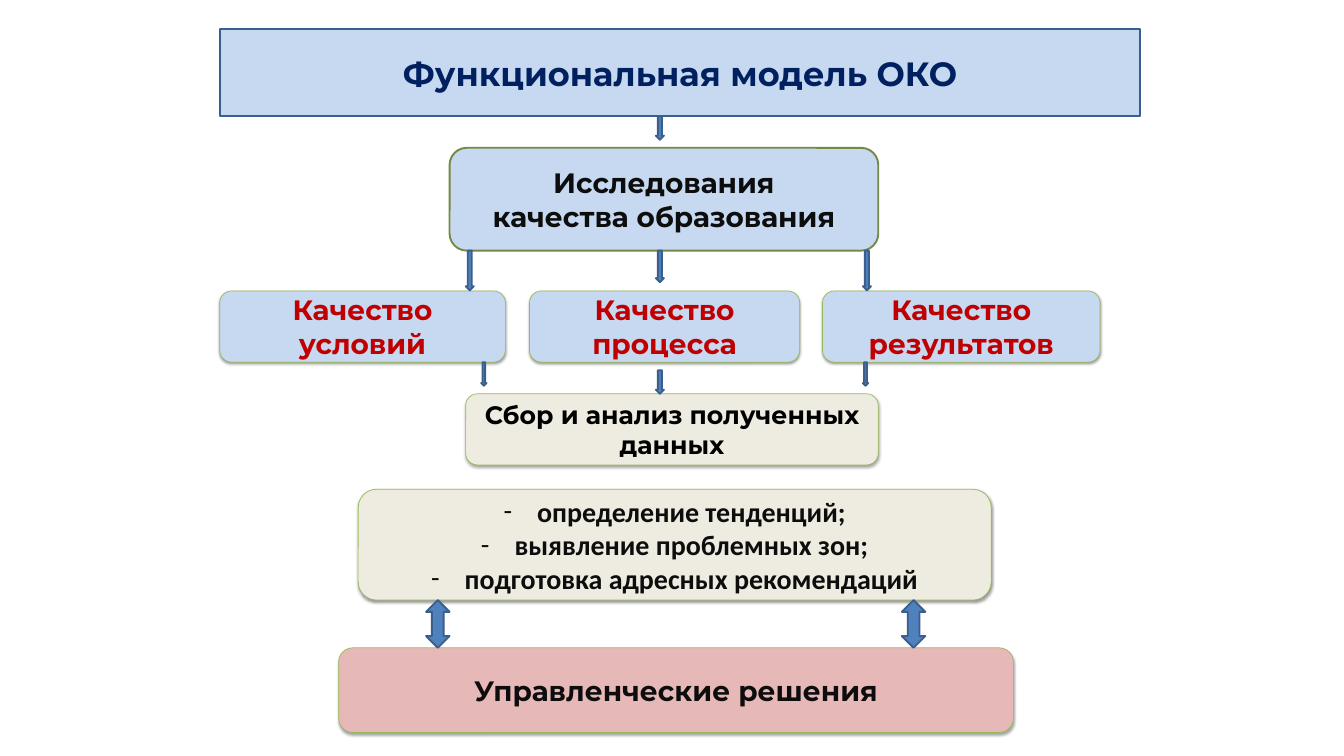
from dataclasses import dataclass

from lxml.etree import SubElement
from pptx import Presentation
from pptx.dml.color import RGBColor
from pptx.enum.shapes import MSO_SHAPE as Preset
from pptx.enum.text import MSO_ANCHOR as Anchor, MSO_AUTO_SIZE as AutoSize, PP_ALIGN as Align
from pptx.oxml.ns import qn
from pptx.shapes.autoshape import Shape
from pptx.slide import Slide
from pptx.util import Emu, Pt

EMU_PER_PX = 9144
PAGE_WIDTH, PAGE_HEIGHT = 2000, 1125
LIST_INDENT = 50

BLUE_FILL = RGBColor(0xC6, 0xD9, 0xF1)
CREAM_FILL = RGBColor(0xEE, 0xEC, 0xE1)
PINK_FILL = RGBColor(0xE6, 0xB9, 0xB8)
ARROW_FILL = RGBColor(0x4F, 0x81, 0xBD)
BLUE_LINE = RGBColor(0x3A, 0x5F, 0x8C)
OLIVE_LINE = RGBColor(0x73, 0x8A, 0x42)
GREEN_LINE = RGBColor(0x98, 0xB9, 0x55)
SHADOW_HEX = "000000"
NAVY = RGBColor(0x00, 0x20, 0x60)
INK = RGBColor(0x0D, 0x0D, 0x0D)
BLACK = RGBColor(0x00, 0x00, 0x00)
RED = RGBColor(0xC0, 0x00, 0x00)


@dataclass(frozen=True)
class Area:
    """A rectangle in px."""

    left: int
    top: int
    width: int
    height: int


@dataclass(frozen=True)
class Block:
    """A rounded box with centred bold text."""

    area: Area
    lines: tuple[str, ...]
    fill: RGBColor = BLUE_FILL
    color: RGBColor = INK
    size: int = 30
    font: str = "Montserrat"
    outline: RGBColor = GREEN_LINE
    outline_width: float = 0.75
    shadow_alpha: int = 38
    shadow_distance: float = 1.6
    bullet: str = ""


@dataclass(frozen=True)
class Arrow:
    """A vertical block arrow."""

    area: Area
    preset: Preset = Preset.DOWN_ARROW


TITLE = Block(Area(327, 43, 1370, 130), ("Функциональная модель ОКО",), color=NAVY,
              size=36, outline=BLUE_LINE, outline_width=2, shadow_alpha=0)
FINDINGS = Block(
    Area(533, 728, 942, 165),
    ("определение тенденций;", "выявление проблемных зон;", "подготовка адресных рекомендаций"),
    fill=CREAM_FILL, font="Calibri", bullet="-")
BLOCKS = (
    Block(Area(669, 220, 638, 153), ("Исследования", "качества образования"),
          outline=OLIVE_LINE, outline_width=2, shadow_alpha=0),
    Block(Area(327, 433, 425, 106), ("Качество", "условий"), color=RED),
    Block(Area(788, 433, 402, 106), ("Качество процесса",), color=RED),
    Block(Area(1224, 433, 413, 106), ("Качество результатов",), color=RED),
    Block(Area(693, 586, 614, 106), ("Сбор и анализ полученных данных",), fill=CREAM_FILL,
          color=BLACK, size=27, shadow_alpha=35, shadow_distance=1.8),
    Block(Area(504, 964, 1004, 126), ("Управленческие решения",), fill=PINK_FILL,
          shadow_alpha=35, shadow_distance=1.8),
)
ARROWS = (
    Arrow(Area(976, 173, 12, 35)),
    Arrow(Area(693, 373, 12, 59)),
    Arrow(Area(976, 373, 12, 47)),
    Arrow(Area(1284, 373, 12, 59)),
    Arrow(Area(716, 539, 8, 35)),
    Arrow(Area(976, 551, 12, 35)),
    Arrow(Area(1284, 539, 8, 35)),
    Arrow(Area(634, 893, 35, 71), Preset.UP_DOWN_ARROW),
    Arrow(Area(1342, 893, 35, 71), Preset.UP_DOWN_ARROW),
)


def px(length: int) -> Emu:
    """Turn px into EMU."""
    return Emu(length * EMU_PER_PX)


def bounds(area: Area) -> tuple[Emu, Emu, Emu, Emu]:
    """Return the area in EMU."""
    return px(area.left), px(area.top), px(area.width), px(area.height)


def paint(shape: Shape, fill: RGBColor, outline: RGBColor, width: float) -> None:
    """Fill and outline a shape and clear its shadow."""
    shape.fill.solid()
    shape.fill.fore_color.rgb = fill
    shape.line.color.rgb = outline
    shape.line.width = Pt(width)
    shape.shadow.inherit = False


def add_shadow(shape: Shape, alpha: int, distance: float) -> None:
    """Give a shape a soft shadow straight below it."""
    effects = shape.element.spPr.find(qn("a:effectLst"))
    shadow = SubElement(effects, qn("a:outerShdw"), blurRad=str(Pt(3.1)),
                        dist=str(Pt(distance)), dir="5400000", rotWithShape="0")
    color = SubElement(shadow, qn("a:srgbClr"), val=SHADOW_HEX)
    SubElement(color, qn("a:alpha"), val=str(alpha * 1000))


def write_lines(shape: Shape, block: Block) -> None:
    """Write each line of a block as a centred paragraph."""
    frame = shape.text_frame
    frame.word_wrap = True
    frame.auto_size = AutoSize.NONE
    frame.vertical_anchor = Anchor.MIDDLE
    frame.text = "\n".join(block.lines)
    for para in frame.paragraphs:
        para.alignment = Align.CENTER
        para.space_before = Pt(0)
        if block.bullet:
            properties = para._p.get_or_add_pPr()
            properties.set("marL", str(px(LIST_INDENT)))
            properties.set("indent", str(-px(LIST_INDENT)))
            SubElement(properties, qn("a:buFont"), typeface=block.font)
            SubElement(properties, qn("a:buChar"), char=block.bullet)
        para.font.name = block.font
        para.font.size = Pt(block.size)
        para.font.bold = True
        para.font.color.rgb = block.color


def format_block(shape: Shape, block: Block) -> None:
    """Apply the colours, shadow and text of a block."""
    paint(shape, block.fill, block.outline, block.outline_width)
    if block.shadow_alpha:
        add_shadow(shape, block.shadow_alpha, block.shadow_distance)
    write_lines(shape, block)


def place_holder(holder: Shape, block: Block) -> None:
    """Move a placeholder, round its corners and format it."""
    holder.left, holder.top, holder.width, holder.height = bounds(block.area)
    geometry = SubElement(holder.element.spPr, qn("a:prstGeom"), prst="roundRect")
    SubElement(geometry, qn("a:avLst"))
    format_block(holder, block)


def add_block(page: Slide, block: Block) -> None:
    """Add a rounded box."""
    box = page.shapes.add_shape(Preset.ROUNDED_RECTANGLE, *bounds(block.area))
    format_block(box, block)


def add_arrow(page: Slide, arrow: Arrow) -> None:
    """Add a block arrow."""
    paint(page.shapes.add_shape(arrow.preset, *bounds(arrow.area)), ARROW_FILL, BLUE_LINE, 2)


def main() -> None:
    """Build and save the deck."""
    deck = Presentation()
    deck.slide_width, deck.slide_height = px(PAGE_WIDTH), px(PAGE_HEIGHT)
    page = deck.slides.add_slide(deck.slide_layouts[1])
    place_holder(page.shapes.title, TITLE)
    place_holder(page.placeholders[1], FINDINGS)
    for block in BLOCKS:
        add_block(page, block)
    for arrow in ARROWS:
        add_arrow(page, arrow)
    deck.save("out.pptx")


if __name__ == "__main__":
    main()
